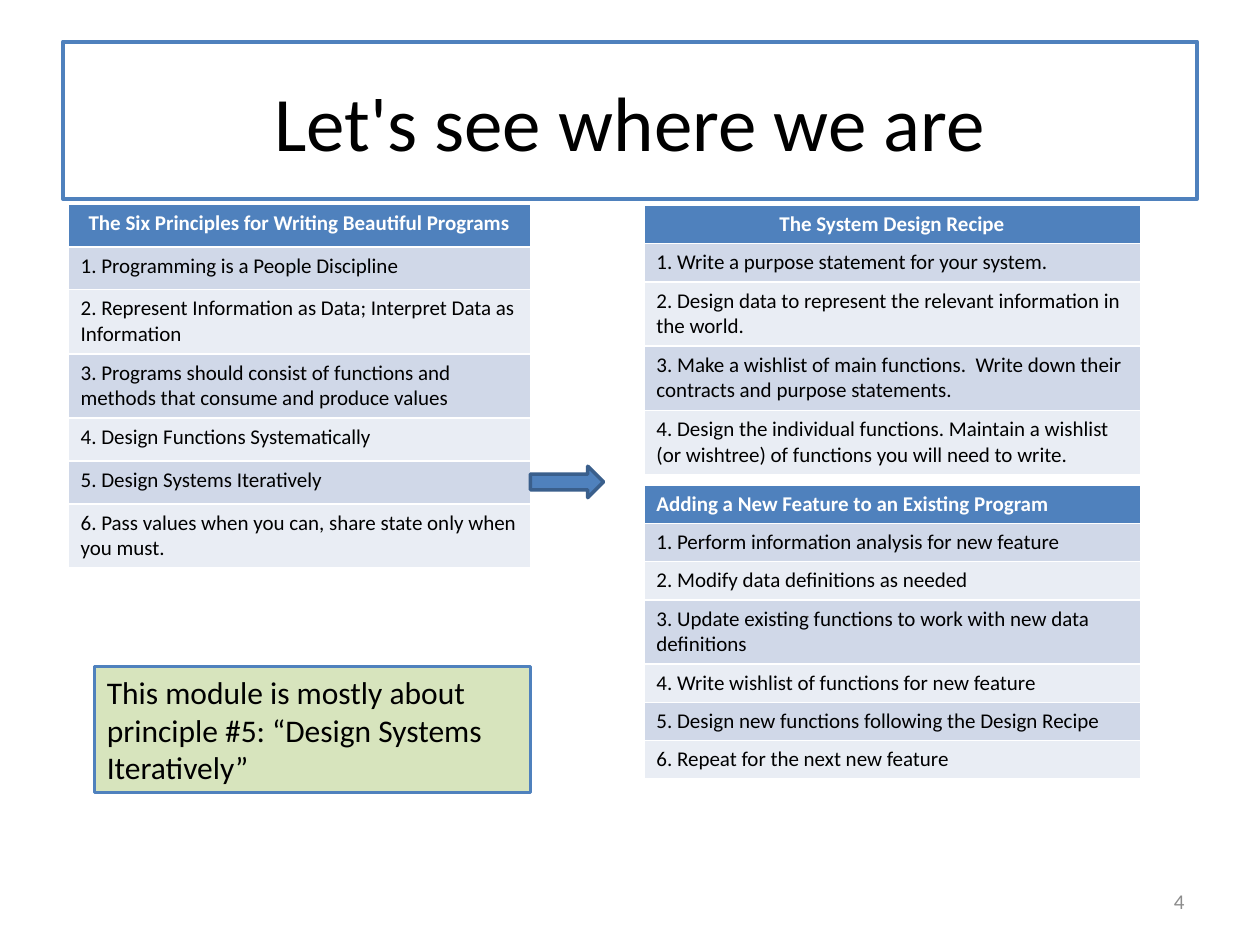
from dataclasses import dataclass

from pptx import Presentation
from pptx.dml.color import RGBColor
from pptx.enum.shapes import MSO_SHAPE
from pptx.enum.text import MSO_ANCHOR, PP_ALIGN
from pptx.util import Inches, Pt


@dataclass(frozen=True)
class Theme:
    font: str = "Calibri"
    title_size: int = 44
    callout_size: int = 18
    body_size: int = 12
    black: RGBColor = RGBColor(0x00, 0x00, 0x00)
    white: RGBColor = RGBColor(0xFF, 0xFF, 0xFF)
    gray: RGBColor = RGBColor(0x8C, 0x8C, 0x8C)
    blue: RGBColor = RGBColor(0x4F, 0x81, 0xBD)
    dark_blue: RGBColor = RGBColor(0x3A, 0x5F, 0x8C)
    green: RGBColor = RGBColor(0xD7, 0xE4, 0xBD)
    bands: tuple = (RGBColor(0xD0, 0xD8, 0xE8), RGBColor(0xE9, 0xED, 0xF4))


theme = Theme()


def write(frame, text, size, color, align=PP_ALIGN.LEFT, bold=False):
    """Put one formatted run into the first paragraph of a text frame."""
    frame.word_wrap = True
    para = frame.paragraphs[0]
    para.alignment = align
    span = para.add_run()
    span.text = text
    span.font.name = theme.font
    span.font.size = Pt(size)
    span.font.bold = bold
    span.font.color.rgb = color


def paint(shape, fill, line, width):
    shape.fill.solid()
    shape.fill.fore_color.rgb = fill
    shape.line.color.rgb = line
    shape.line.width = Pt(width)
    shape.shadow.inherit = False


deck = Presentation()
deck.slide_width, deck.slide_height = Inches(10), Inches(7.5)
page = deck.slides.add_slide(deck.slide_layouts[5])

# Title
title = page.shapes.title
title.left, title.top = Inches(0.5), Inches(0.33)
title.width, title.height = Inches(9), Inches(1.25)
paint(title, theme.white, theme.blue, 2.25)
title.text_frame.vertical_anchor = MSO_ANCHOR.MIDDLE
write(title.text_frame, "Let's see where we are", theme.title_size, theme.black, PP_ALIGN.CENTER)

# Lists: left, top, width, one-line row height, heading alignment, heading, items
two_lines = 0.51
lists = [
    (0.54, 1.62, 3.67, 0.34, PP_ALIGN.CENTER,
     "The Six Principles for Writing Beautiful Programs", [
         "1. Programming is a People Discipline",
         "2. Represent Information as Data; Interpret Data as Information",
         "3. Programs should consist of functions and methods that consume and produce values",
         "4. Design Functions Systematically",
         "5. Design Systems Iteratively",
         "6. Pass values when you can, share state only when you must.",
     ]),
    (5.11, 1.63, 3.94, 0.3, PP_ALIGN.CENTER,
     "The System Design Recipe", [
         "1. Write a purpose statement for your system.",
         "2. Design data to represent the relevant information in the world.",
         "3. Make a wishlist of main functions.  Write down their contracts and purpose statements.",
         "4. Design the individual functions. Maintain a wishlist "
         "(or wishtree) of functions you will need to write.",
     ]),
    (5.11, 3.85, 3.94, 0.3, PP_ALIGN.LEFT,
     "Adding a New Feature to an Existing Program", [
         "1. Perform information analysis for new feature",
         "2. Modify data definitions as needed",
         "3. Update existing functions to work with new data definitions",
         "4. Write wishlist of functions for new feature",
         "5. Design new functions following the Design Recipe",
         "6. Repeat for the next new feature",
     ]),
]
longest_line = 54
for left, top, width, row_height, heading_align, heading, items in lists:
    texts = [heading, *items]
    heights = [two_lines if len(text) > longest_line else row_height for text in texts]
    table = page.shapes.add_table(len(texts), 1, Inches(left), Inches(top),
                                  Inches(width), Inches(sum(heights))).table
    for index, (text, height) in enumerate(zip(texts, heights)):
        table.rows[index].height = Inches(height)
        cell = table.cell(index, 0)
        cell.margin_top = cell.margin_bottom = Inches(0.05)
        cell.fill.solid()
        if index == 0:
            cell.fill.fore_color.rgb = theme.blue
            write(cell.text_frame, text, theme.body_size, theme.white, heading_align, bold=True)
        else:
            cell.fill.fore_color.rgb = theme.bands[(index - 1) % 2]
            write(cell.text_frame, text, theme.body_size, theme.black)

# Arrow from principle 5 to the recipes
arrow = page.shapes.add_shape(MSO_SHAPE.RIGHT_ARROW, Inches(4.21), Inches(3.7),
                              Inches(0.58), Inches(0.25))
paint(arrow, theme.blue, theme.dark_blue, 2)

# Callout
callout = page.shapes.add_shape(MSO_SHAPE.RECTANGLE, Inches(0.75), Inches(5.29),
                                Inches(3.46), Inches(1))
paint(callout, theme.green, theme.blue, 2)
callout.text_frame.vertical_anchor = MSO_ANCHOR.TOP
write(callout.text_frame, "This module is mostly about principle #5: “Design Systems Iteratively”",
      theme.callout_size, theme.black)

# Page number
number_box = page.shapes.add_textbox(Inches(7.17), Inches(6.95), Inches(2.33), Inches(0.4))
number_box.text_frame.vertical_anchor = MSO_ANCHOR.MIDDLE
write(number_box.text_frame, "4", theme.body_size, theme.gray, PP_ALIGN.RIGHT)

deck.save("out.pptx")
